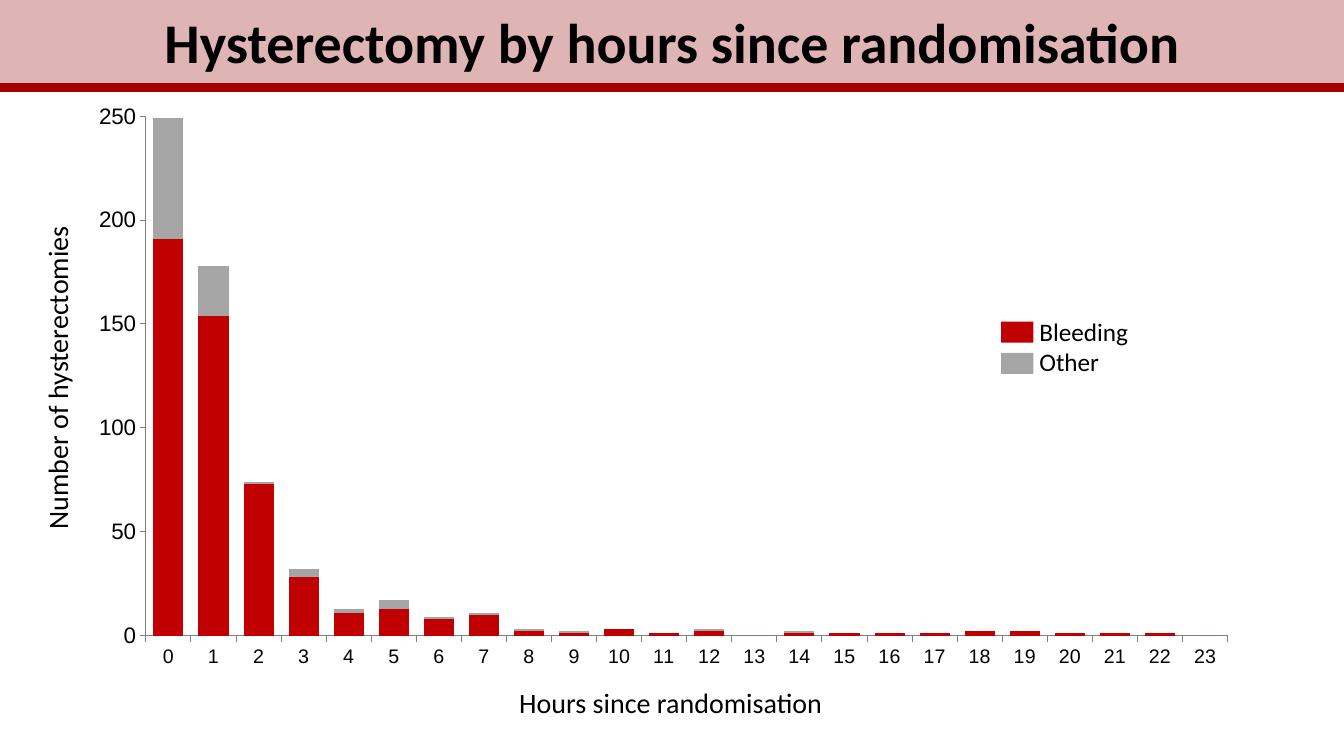
"""Build the slide on hysterectomy by hours since randomisation."""
from dataclasses import dataclass

from lxml import etree
from pptx import Presentation
from pptx.chart.data import CategoryChartData
from pptx.dml.color import RGBColor
from pptx.enum import chart as ch, shapes, text
from pptx.oxml.ns import qn
from pptx.util import Inches, Pt

BLACK = "000000"
AXIS_GREY = "808080"


@dataclass
class Cause:
    name: str
    color: str
    counts: list[int]


@dataclass
class Label:
    lines: list[str]
    left: float
    top: float
    width: float
    height: float
    size: int
    rotation: int = 0


CAUSES = [
    Cause("Bleeding", "C00000", [191, 154, 73, 28, 11, 13, 8, 10, 2, 1, 3, 1,
                                 2, 0, 1, 1, 1, 1, 2, 2, 1, 1, 1, 0]),
    Cause("Other", "A5A5A5", [58, 24, 1, 4, 2, 4, 1, 1, 1, 1, 0, 0,
                              1, 0, 1] + [0] * 9),
]
LABELS = [
    Label(["Hours since randomisation"], 5.05, 6.75, 3.24, 0.44, 20),
    Label(["Number of hysterectomies"], -1.05, 3.51, 3.24, 0.44, 20, 270),
    Label([cause.name for cause in CAUSES], 10.21, 3.09, 2.38, 0.73, 18),
]
PLOT_LAYOUT = {"layoutTarget": "inner", "xMode": "edge", "yMode": "edge",
               "x": 0.059, "y": 0.04, "w": 0.921, "h": 0.884}


def rgb(value: str) -> RGBColor:
    return RGBColor.from_string(value)


def paint(target, color: str) -> None:
    target.fill.solid()
    target.fill.fore_color.rgb = rgb(color)


def style_font(font, name: str, size: int, bold: bool = False) -> None:
    font.name, font.size, font.bold = name, Pt(size), bold
    font.color.rgb = rgb(BLACK)


def add_header(slide) -> None:
    sp = slide.shapes.title
    sp.left, sp.top, sp.width, sp.height = 0, 0, Inches(13.33), Inches(0.91)
    paint(sp, "DEB4B4")
    tf = sp.text_frame
    tf.text = "Hysterectomy by hours since randomisation"
    tf.vertical_anchor = text.MSO_ANCHOR.MIDDLE
    tf.auto_size = text.MSO_AUTO_SIZE.NONE
    p = tf.paragraphs[0]
    p.alignment = text.PP_ALIGN.CENTER
    p.line_spacing = 0.9
    style_font(p.font, "Calibri", 40, True)
    rule = slide.shapes.add_connector(
        shapes.MSO_CONNECTOR.STRAIGHT, 0, Inches(0.87), Inches(13.33), Inches(0.87))
    rule.line.color.rgb = rgb("A40000")
    rule.line.width = Pt(6)
    etree.SubElement(rule._element.spPr, qn("a:effectLst"))


def add_label(slide, label: Label) -> None:
    sp = slide.shapes.add_textbox(Inches(label.left), Inches(label.top),
                                  Inches(label.width), Inches(label.height))
    sp.rotation = label.rotation
    tf = sp.text_frame
    tf.word_wrap = False
    tf.text = "\n".join(label.lines)
    for p in tf.paragraphs:
        style_font(p.font, "Calibri", label.size)


def style_axis(axis, size: int) -> None:
    axis.has_major_gridlines = False
    axis.major_tick_mark = ch.XL_TICK_MARK.OUTSIDE
    axis.minor_tick_mark = ch.XL_TICK_MARK.NONE
    axis.format.line.color.rgb = rgb(AXIS_GREY)
    axis.format.line.width = Pt(0.75)
    style_font(axis.tick_labels.font, "Arial", size)


def fix_plot_area(chart) -> None:
    area = chart._chartSpace.chart.plotArea
    for old in area.findall(qn("c:layout")):
        area.remove(old)
    layout = etree.Element(qn("c:layout"))
    area.insert(0, layout)
    manual = etree.SubElement(layout, qn("c:manualLayout"))
    for tag, value in PLOT_LAYOUT.items():
        etree.SubElement(manual, qn(f"c:{tag}")).set("val", str(value))


def add_histogram(slide) -> None:
    data = CategoryChartData()
    data.categories = [str(hour) for hour in range(24)]
    for cause in CAUSES:
        data.add_series(cause.name, cause.counts)
    chart = slide.shapes.add_chart(
        ch.XL_CHART_TYPE.COLUMN_STACKED, Inches(0.76), Inches(0.92),
        Inches(11.65), Inches(5.83), data).chart
    chart.has_title = False
    chart.has_legend = False
    style_font(chart.font, "Arial", 10)
    plot = chart.plots[0]
    plot.gap_width, plot.overlap = 50, 100
    plot.vary_by_categories = False
    for series, cause in zip(plot.series, CAUSES):
        paint(series.format, cause.color)
    style_axis(chart.category_axis, 14)
    style_axis(chart.value_axis, 16)
    chart.value_axis.minimum_scale = 0
    chart.value_axis.maximum_scale = 250
    chart.value_axis.major_unit = 50
    fix_plot_area(chart)


def add_legend_keys(slide) -> None:
    for i, cause in enumerate(CAUSES):
        sp = slide.shapes.add_shape(
            shapes.MSO_SHAPE.RECTANGLE, Inches(9.93), Inches(3.19 + 0.31 * i),
            Inches(0.32), Inches(0.21))
        sp.shadow.inherit = False
        paint(sp, cause.color)
        sp.line.fill.background()


def main() -> None:
    prs = Presentation()
    prs.slide_width, prs.slide_height = Inches(13.33), Inches(7.5)
    slide = prs.slides.add_slide(prs.slide_layouts[5])
    add_header(slide)
    add_histogram(slide)
    add_legend_keys(slide)
    for label in LABELS:
        add_label(slide, label)
    prs.save("out.pptx")


if __name__ == "__main__":
    main()
